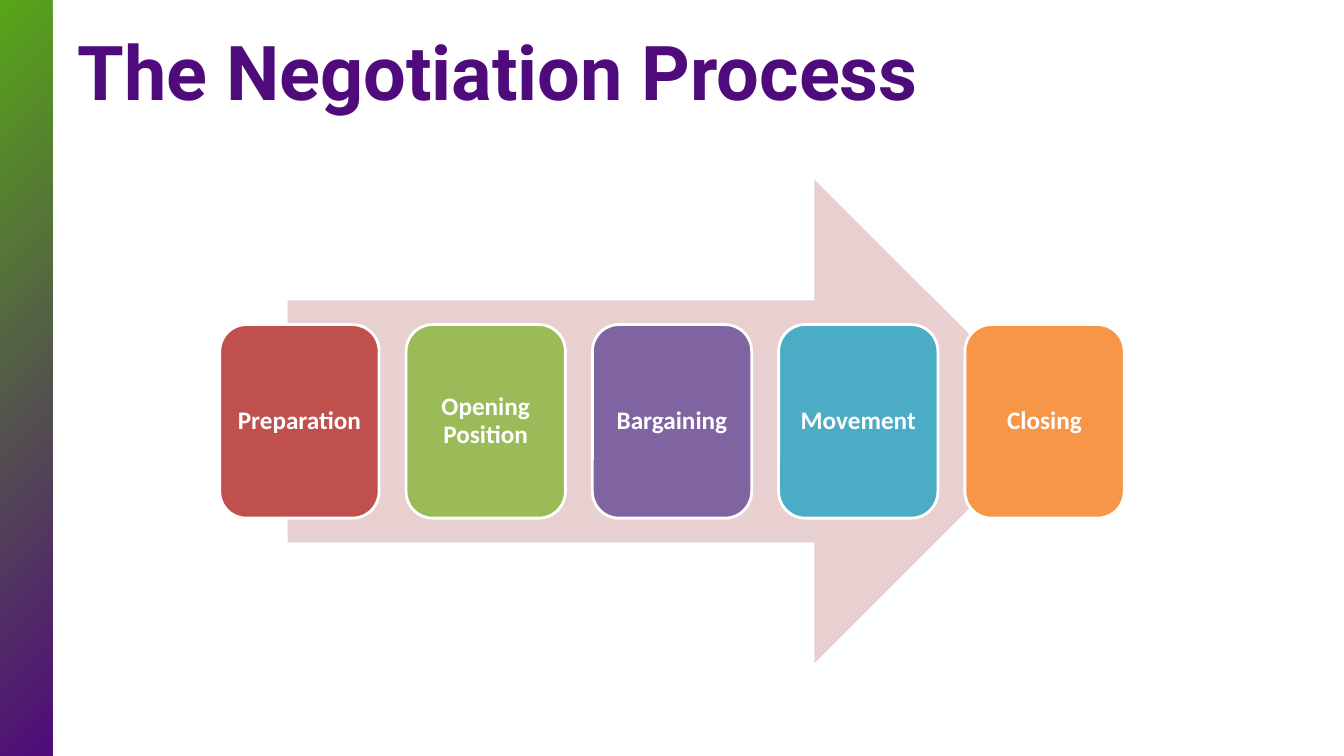
from lxml import etree
from pptx import Presentation, util as u
from pptx.dml.color import RGBColor
from pptx.enum import shapes, text
from pptx.oxml.ns import qn

PURPLE = RGBColor(0x4F, 0x0B, 0x7B)
GREEN = RGBColor(0x58, 0xA6, 0x18)
WHITE = RGBColor(0xFF, 0xFF, 0xFF)
ARROW_PINK = RGBColor(0xE8, 0xD0, 0xD0)
STAGES = [
    ("Preparation", RGBColor(0xC0, 0x50, 0x4D)),
    ("Opening Position", RGBColor(0x9B, 0xBB, 0x59)),
    ("Bargaining", RGBColor(0x80, 0x64, 0xA2)),
    ("Movement", RGBColor(0x4B, 0xAC, 0xC6)),
    ("Closing", RGBColor(0xF7, 0x96, 0x46)),
]
TITLE_FONT = {"name": "Roboto", "size": u.Pt(54), "bold": True}
STAGE_FONT = {"name": "Calibri", "size": u.Pt(18), "bold": True}


def add_plain_shape(page, kind, box):
    """Add a preset shape without shadow or outline."""
    shape = page.shapes.add_shape(kind, *map(u.Inches, box))
    shape.shadow.inherit = False
    shape.line.fill.background()
    return shape


def write_text(shape, words, font, color, inset, align):
    frame = shape.text_frame
    margins = dict.fromkeys(
        ("margin_left", "margin_right", "margin_top", "margin_bottom"), u.Inches(inset))
    settings = {"word_wrap": True, "vertical_anchor": text.MSO_ANCHOR.MIDDLE, **margins}
    for name, value in settings.items():
        setattr(frame, name, value)
    para = frame.paragraphs[0]
    para.alignment = align
    para.line_spacing = 0.9
    span = para.add_run()
    span.text = words
    for name, value in font.items():
        setattr(span.font, name, value)
    span.font.color.rgb = color


def add_side_band(page, box):
    """Add the band whose gradient spreads from its lower right corner."""
    band = add_plain_shape(page, shapes.MSO_SHAPE.RECTANGLE, box)
    band.fill.gradient()
    for stop, color, position in zip(band.fill.gradient_stops, (PURPLE, GREEN), (0, 1)):
        stop.color.rgb = color
        stop.position = position
    linear = band.element.spPr.find(qn("a:gradFill")).find(qn("a:lin"))
    radial = etree.Element(qn("a:path"), {"path": "circle"})
    etree.SubElement(radial, qn("a:fillToRect"), {"l": "100000", "t": "100000"})
    linear.getparent().replace(linear, radial)


def add_title(page, box):
    title = page.shapes.add_textbox(*map(u.Inches, box))
    write_text(title, "The Negotiation Process", TITLE_FONT, PURPLE, 0.1, text.PP_ALIGN.LEFT)


def add_process(page, box):
    """Add a wide arrow with a row of evenly spaced stages across its middle."""
    left, top, width, height = box
    arrow_width = 0.85 * width
    arrow = add_plain_shape(
        page, shapes.MSO_SHAPE.RIGHT_ARROW,
        (left + (width - arrow_width) / 2, top, arrow_width, height))
    arrow.fill.solid()
    arrow.fill.fore_color.rgb = ARROW_PINK

    stage_width, stage_height = 1.58, 0.4 * height
    step = (width - stage_width) / (len(STAGES) - 1)
    stage_top = top + (height - stage_height) / 2
    for index, (name, color) in enumerate(STAGES):
        stage = add_plain_shape(
            page, shapes.MSO_SHAPE.ROUNDED_RECTANGLE,
            (left + index * step, stage_top, stage_width, stage_height))
        stage.fill.solid()
        stage.fill.fore_color.rgb = color
        stage.line.color.rgb = WHITE
        stage.line.width = u.Pt(2)
        write_text(stage, name, STAGE_FONT, WHITE, 0.07, text.PP_ALIGN.CENTER)


def main():
    deck = Presentation()
    deck.slide_width, deck.slide_height = u.Inches(13.33), u.Inches(7.5)
    page = deck.slides.add_slide(deck.slide_layouts[6])
    add_side_band(page, (0, 0, 0.52, 7.5))
    add_title(page, (0.67, 0.13, 12, 1.25))
    add_process(page, (2.18, 1.78, 8.97, 4.8))
    deck.save("out.pptx")


if __name__ == "__main__":
    main()
